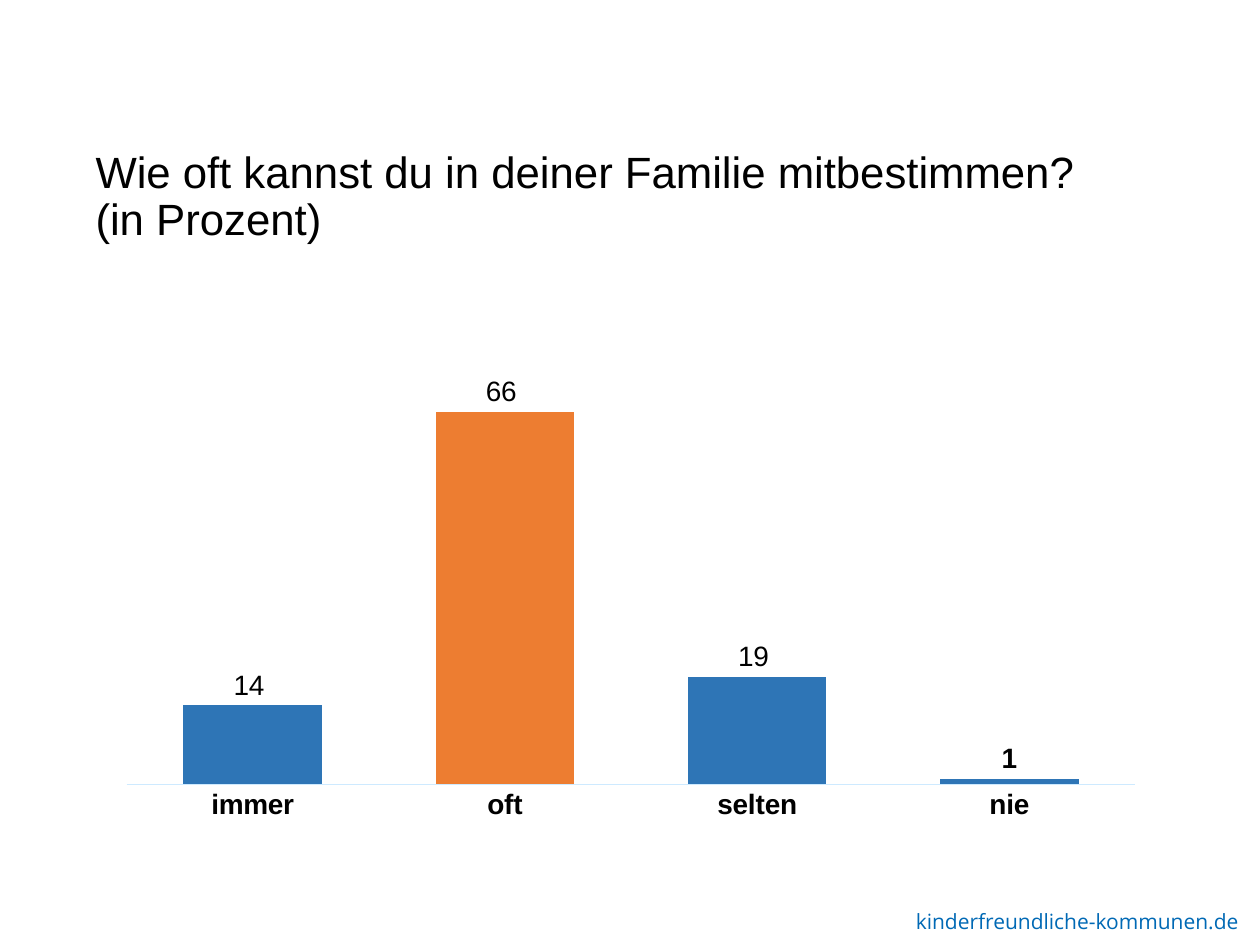
import pptx
import pptx.chart.data
import pptx.dml.color
import pptx.enum.chart
import pptx.enum.text
import pptx.oxml
import pptx.oxml.ns
import pptx.util

WIDTH, HEIGHT = 10, 7.5
FONT = "Arial"
BLACK, WHITE, BLUE, ORANGE = "000000", "FFFFFF", "2E75B6", "ED7D31"
LINK_BLUE, AXIS_BLUE = "0069B5", "CEEAFF"
ANSWERS = {"immer": 14, "oft": 66, "selten": 19, "nie": 1}
HIGHLIGHT = "oft"


def color(hex_code):
    return pptx.dml.color.RGBColor.from_string(hex_code)


def area(left, top, width, height):
    """Turn shares of the slide's size into lengths."""
    return [pptx.util.Inches(share * size) for share, size in
            zip((left, top, width, height), (WIDTH, HEIGHT) * 2)]


def style_font(font, size, hex_code=BLACK, name=FONT, bold=False):
    font.name = name
    font.size = pptx.util.Pt(size)
    font.bold = bold
    font.color.rgb = color(hex_code)


def style_line(line, hex_code):
    line.color.rgb = color(hex_code)
    line.width = pptx.util.Pt(0.75)


def add_text(slide, place, lines, size, hex_code=BLACK, name=FONT, spacing=1.0):
    frame = slide.shapes.add_textbox(*area(*place)).text_frame
    frame.word_wrap = True
    frame.vertical_anchor = pptx.enum.text.MSO_ANCHOR.TOP
    paragraph = frame.paragraphs[0]
    paragraph.line_spacing = spacing
    for index, line in enumerate(lines):
        if index:
            paragraph.add_line_break()
        run = paragraph.add_run()
        run.text = line
        style_font(run.font, size, hex_code, name)


def place_plot(chart, x, y, w, h):
    """Fix the inner plot area, in shares of the chart's size."""
    plot_area = chart.plots[0]._element.getparent()
    for layout in plot_area.findall(pptx.oxml.ns.qn("c:layout")):
        plot_area.remove(layout)
    values = "".join(f'<c:{tag} val="{value}"/>' for tag, value in
                     (("x", x), ("y", y), ("w", w), ("h", h)))
    plot_area.insert(0, pptx.oxml.parse_xml(
        f'<c:layout {pptx.oxml.ns.nsdecls("c")}><c:manualLayout>'
        '<c:layoutTarget val="inner"/><c:xMode val="edge"/><c:yMode val="edge"/>'
        f'{values}</c:manualLayout></c:layout>'))


def style_axes(chart):
    category_axis = chart.category_axis
    category_axis.major_tick_mark = pptx.enum.chart.XL_TICK_MARK.NONE
    category_axis.has_major_gridlines = False
    style_font(category_axis.tick_labels.font, 16, bold=True)
    style_line(category_axis.format.line, AXIS_BLUE)
    value_axis = chart.value_axis
    value_axis.minimum_scale, value_axis.maximum_scale = 0, 70
    value_axis.has_major_gridlines = False
    value_axis.visible = False


def style_columns(plot):
    plot.gap_width, plot.overlap = 82, -27
    plot.vary_by_categories = False
    series = plot.series[0]
    outside = pptx.enum.chart.XL_LABEL_POSITION.OUTSIDE_END
    labels = series.data_labels
    labels.show_value = True
    labels.position = outside
    style_font(labels.font, 16, bold=True)
    for index, (answer, value) in enumerate(ANSWERS.items()):
        point = series.points[index]
        point.format.fill.solid()
        point.format.fill.fore_color.rgb = color(
            ORANGE if answer == HIGHLIGHT else BLUE)
        # Two-digit values carry their own regular-weight label
        if value >= 10:
            label = point.data_label
            run = label.text_frame.paragraphs[0].add_run()
            run.text = f"{value} "
            style_font(run.font, 16)
            label.position = outside


def add_answer_chart(slide, place):
    data = pptx.chart.data.CategoryChartData()
    data.categories = list(ANSWERS)
    data.add_series("Series 1", list(ANSWERS.values()))
    chart = slide.shapes.add_chart(
        pptx.enum.chart.XL_CHART_TYPE.COLUMN_CLUSTERED, *area(*place), data).chart
    chart.has_title = chart.has_legend = False
    style_font(chart.font, 16, bold=True)
    style_axes(chart)
    style_columns(chart.plots[0])
    place_plot(chart, 0.04, 0.122, 0.929, 0.72)


def main():
    presentation = pptx.Presentation()
    presentation.slide_width = pptx.util.Inches(WIDTH)
    presentation.slide_height = pptx.util.Inches(HEIGHT)
    slide = presentation.slides.add_slide(presentation.slide_layouts[6])
    slide.background.fill.solid()
    slide.background.fill.fore_color.rgb = color(WHITE)

    # Footer address
    add_text(slide, (0.717, 0.955, 0.293, 0.04), ["kinderfreundliche-kommunen.de"],
             12, LINK_BLUE, "Open Sans")
    # Question
    add_text(slide, (0.066, 0.153, 0.871, 0.143),
             ["Wie oft kannst du in deiner Familie mitbestimmen?", "(in Prozent)"],
             25, spacing=0.9)
    # Answers in percent
    add_answer_chart(slide, (0.066, 0.341, 0.862, 0.581))

    presentation.save("out.pptx")


if __name__ == "__main__":
    main()
